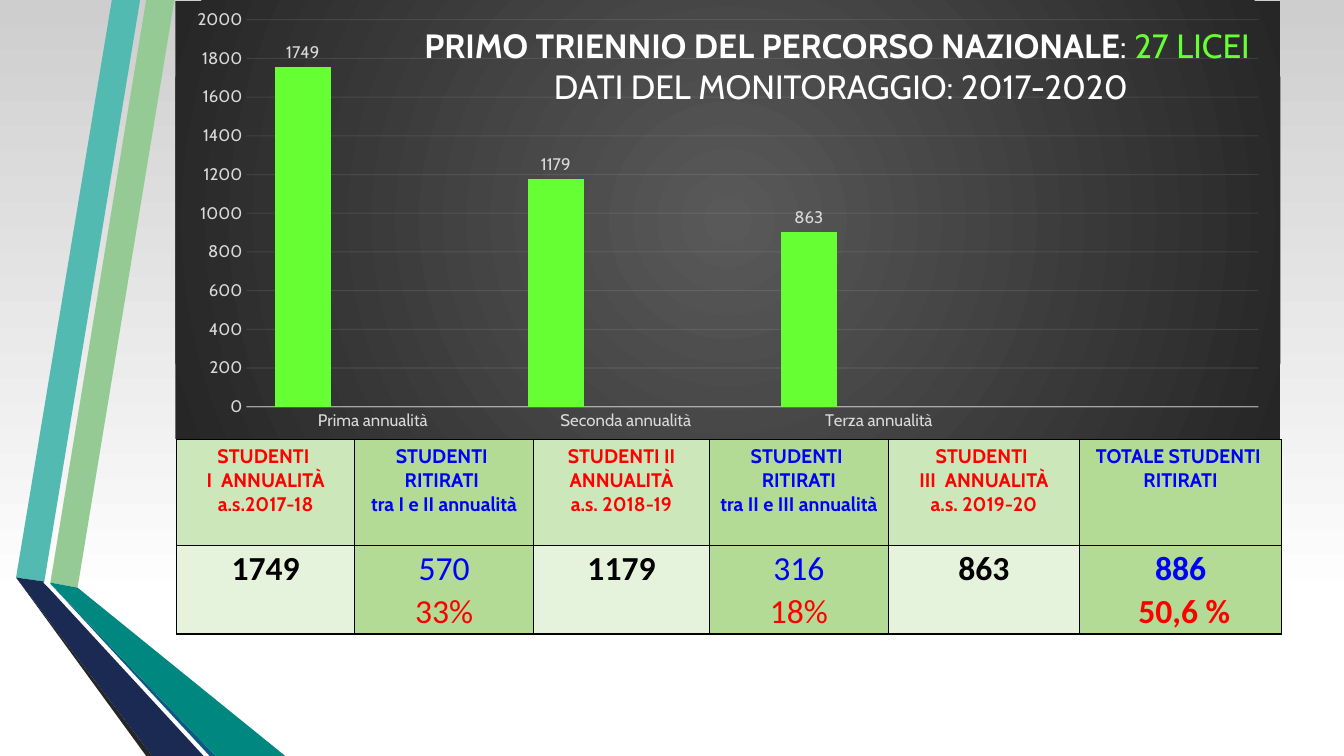
from dataclasses import dataclass

import pptx
import pptx.chart.data
import pptx.dml.color
import pptx.enum.chart
import pptx.enum.text
import pptx.oxml
import pptx.oxml.ns
import pptx.util
from pptx.util import Inches

COLORS = {
    "white": "FFFFFF", "black": "000000", "red": "FF0000", "blue": "0000FF",
    "lime": "66FF33", "brick": "C04033", "violet": "9452D1",
    "backdrop": "CECECE", "label": "D9D9D9", "axis": "F2F2F2",
    "glow": "595959", "charcoal": "262626",
    "sage": "96CA94", "aqua": "52BAB0", "ocean": "0C5A82", "teal": "008880", "navy": "1A2A52",
    "head": "CCE7B9", "body": "E6F3DC", "withdrawn": "B3DB95",
}
NS = pptx.oxml.ns.nsdecls("a")
CENTER = pptx.enum.text.PP_ALIGN.CENTER


@dataclass
class Ribbon:
    color: str
    points: list[tuple[float, float]]


@dataclass
class Line:
    text: str
    color: str
    bold: bool = True


@dataclass
class Column:
    width: float
    color: str
    header: list[str]
    values: list[Line]
    withdrawn: bool = False


@dataclass
class Series:
    name: str
    color: str
    values: list[int | None]
    labels: dict[int, str]


RIBBONS = [
    Ribbon("sage", [(0.5, 5.78), (0.77, 5.83), (1.73, 0), (1.45, 0)]),
    Ribbon("aqua", [(1.39, 0), (1.11, 0), (0.16, 5.73), (0.44, 5.77)]),
    Ribbon("charcoal", [(0.16, 5.73), (1.45, 7.5), (1.51, 7.5)]),
    Ribbon("ocean", [(0.5, 5.79), (2.08, 7.5), (2.14, 7.5)]),
    Ribbon("teal", [(0.5, 5.79), (2.14, 7.5), (2.83, 7.5), (0.77, 5.83), (0.5, 5.78)]),
    Ribbon("navy", [(2.02, 7.5), (0.48, 5.83), (0.43, 5.78), (0.44, 5.77), (0.16, 5.73), (1.51, 7.5)]),
]
CATEGORIES = ["Prima annualità", "Seconda annualità", "Terza annualità", ""]
SERIES = [
    Series("Series 1", "lime", [1755, 1179, 903, None], {0: "1749", 2: "863"}),
    Series("Series 2", "brick", [None] * 4, {}),
    Series("Series 3", "violet", [None] * 4, {}),
]
COLUMNS = [
    Column(1.77, "red", ["STUDENTI ", "I  ANNUALITÀ", "a.s.2017-18"], [Line("1749", "black")]),
    Column(1.77, "blue", ["STUDENTI ", "RITIRATI ", "tra I e II annualità"],
           [Line("570", "blue", False), Line("33%", "red", False)], True),
    Column(1.75, "red", ["STUDENTI II ANNUALITÀ", "a.s. 2018-19"], [Line("1179", "black")]),
    Column(1.77, "blue", ["STUDENTI ", "RITIRATI", "tra II e III annualità"],
           [Line("316", "blue", False), Line("18%", "red", False)], True),
    Column(1.9, "red", ["STUDENTI ", "III  ANNUALITÀ", "a.s. 2019-20"], [Line("863", "black")]),
    Column(2, "blue", ["TOTALE STUDENTI ", "RITIRATI"],
           [Line("886", "blue"), Line(" 50,6 %", "red")], True),
]
ROW_HEIGHTS = [1.05, 0.88]


def rgb(name: str) -> pptx.dml.color.RGBColor:
    return pptx.dml.color.RGBColor.from_string(COLORS[name])


def set_font(font, size: float, color: str, name: str = "Cabin", bold: bool = False) -> None:
    font.size, font.name, font.bold = pptx.util.Pt(size), name, bold
    font.color.rgb = rgb(color)


def add_run(p, text: str, size: float, color: str, name: str = "Cabin", bold: bool = False) -> None:
    r = p.add_run()
    r.text = text
    set_font(r.font, size, color, name, bold)


def set_background(s) -> None:
    fill = s.background.fill
    fill.gradient()
    fill.gradient_angle = 90
    for stop, position, color in zip(fill.gradient_stops, (0.2, 1), ("white", "backdrop")):
        stop.position = position
        stop.color.rgb = rgb(color)


def add_ribbon(s, ribbon: Ribbon) -> None:
    points = [(Inches(x), Inches(y)) for x, y in ribbon.points]
    builder = s.shapes.build_freeform(*points[0])
    builder.add_line_segments(points[1:], close=True)
    sp = builder.convert_to_shape()
    sp.shadow.inherit = False
    sp.fill.solid()
    sp.fill.fore_color.rgb = rgb(ribbon.color)
    sp.line.fill.background()


def set_faint_line(line, width: float, opacity: int) -> None:
    """Draw a pale line with the given opacity in percent."""
    line.width = pptx.util.Pt(width)
    line.color.rgb = rgb("axis")
    color = line._get_or_add_ln().find(".//" + pptx.oxml.ns.qn("a:srgbClr"))
    color.append(pptx.oxml.parse_xml(f'<a:alpha {NS} val="{opacity * 1000}"/>'))


def fill_chart_area(chart) -> None:
    """Give the chart a dark fill that glows from its centre."""
    area = pptx.oxml.parse_xml(
        f'<c:spPr {pptx.oxml.ns.nsdecls("c", "a")}><a:gradFill><a:gsLst>'
        f'<a:gs pos="0"><a:srgbClr val="{COLORS["glow"]}"/></a:gs>'
        f'<a:gs pos="100000"><a:srgbClr val="{COLORS["charcoal"]}"/></a:gs></a:gsLst>'
        '<a:path path="circle"><a:fillToRect l="50000" t="50000" r="50000" b="50000"/></a:path>'
        '</a:gradFill><a:ln><a:noFill/></a:ln></c:spPr>')
    chart._chartSpace.chart.addnext(area)


def style_series(series, source: Series) -> None:
    outside = pptx.enum.chart.XL_LABEL_POSITION.OUTSIDE_END
    series.format.fill.solid()
    series.format.fill.fore_color.rgb = rgb(source.color)
    labels = series.data_labels
    labels.show_value = True
    labels.position = outside
    set_font(labels.font, 12, "label")
    for index, text in source.labels.items():
        label = series.points[index].data_label
        add_run(label.text_frame.paragraphs[0], text, 12, "label")
        label.position = outside


def add_students_chart(s) -> None:
    data = pptx.chart.data.CategoryChartData()
    data.categories = CATEGORIES
    for source in SERIES:
        data.add_series(source.name, source.values)
    chart = s.shapes.add_chart(
        pptx.enum.chart.XL_CHART_TYPE.COLUMN_CLUSTERED,
        Inches(1.74), Inches(0.01), Inches(10.96), Inches(4.35), data).chart
    chart.has_legend = chart.has_title = False
    set_font(chart.font, 10, "black")
    fill_chart_area(chart)
    plot = chart.plots[0]
    plot.gap_width, plot.overlap, plot.vary_by_categories = 100, -24, False
    for series, source in zip(plot.series, SERIES):
        style_series(series, source)
    for axis in (chart.category_axis, chart.value_axis):
        axis.major_tick_mark = axis.minor_tick_mark = pptx.enum.chart.XL_TICK_MARK.NONE
        set_font(axis.tick_labels.font, 12, "label")
    set_faint_line(chart.category_axis.format.line, 1, 54)
    values = chart.value_axis
    values.minimum_scale, values.maximum_scale, values.major_unit = 0, 2000, 200
    values.format.line.fill.background()
    set_faint_line(values.major_gridlines.format.line, 0.75, 10)


def fill_cell(cell, fill: str, lines: list[Line], size: float, font: str, spacing: float) -> None:
    cell.fill.solid()
    cell.fill.fore_color.rgb = rgb(fill)
    for i, line in enumerate(lines):
        p = cell.text_frame.add_paragraph() if i else cell.text_frame.paragraphs[0]
        p.alignment, p.line_spacing = CENTER, spacing
        add_run(p, line.text, size, line.color, font, line.bold)
    for i, side in enumerate(("lnL", "lnR", "lnT", "lnB")):
        cell._tc.get_or_add_tcPr().insert(i, pptx.oxml.parse_xml(
            f'<a:{side} {NS} w="12700"><a:solidFill><a:srgbClr val="{COLORS["black"]}"/>'
            f'</a:solidFill></a:{side}>'))


def add_students_table(s) -> None:
    table = s.shapes.add_table(
        len(ROW_HEIGHTS), len(COLUMNS), Inches(1.75), Inches(4.36),
        Inches(sum(c.width for c in COLUMNS)), Inches(sum(ROW_HEIGHTS))).table
    table.first_row = table.horz_banding = False
    for row, height in zip(table.rows, ROW_HEIGHTS):
        row.height = Inches(height)
    for i, column in enumerate(COLUMNS):
        table.columns[i].width = Inches(column.width)
        header = [Line(text, column.color) for text in column.header]
        head, body = table.cell(0, i), table.cell(1, i)
        fill_cell(head, "withdrawn" if column.withdrawn else "head", header, 14, "Cabin", 1.0)
        fill_cell(body, "withdrawn" if column.withdrawn else "body", column.values, 24, "Calibri", 1.07)
        body.margin_left = body.margin_right = body.margin_top = body.margin_bottom = 0


def add_title(s) -> None:
    tf = s.shapes.add_textbox(Inches(2.86), Inches(0.37), Inches(10.96), Inches(0.56)).text_frame
    tf.word_wrap = True
    tf.vertical_anchor = pptx.enum.text.MSO_ANCHOR.MIDDLE
    p = tf.paragraphs[0]
    p.alignment = CENTER
    add_run(p, "PRIMO TRIENNIO DEL PERCORSO NAZIONALE", 24, "white", bold=True)
    add_run(p, ": ", 24, "white")
    add_run(p, "27 LICEI ", 24, "lime")
    p.add_line_break()
    add_run(p, "DATI DEL MONITORAGGIO: 2017-2020", 24, "white")


def main() -> None:
    prs = pptx.Presentation()
    prs.slide_width, prs.slide_height = Inches(13.33), Inches(7.5)
    s = prs.slides.add_slide(prs.slide_layouts[6])
    set_background(s)
    for ribbon in RIBBONS:
        add_ribbon(s, ribbon)
    add_students_chart(s)
    add_students_table(s)
    add_title(s)
    prs.save("out.pptx")


if __name__ == "__main__":
    main()
